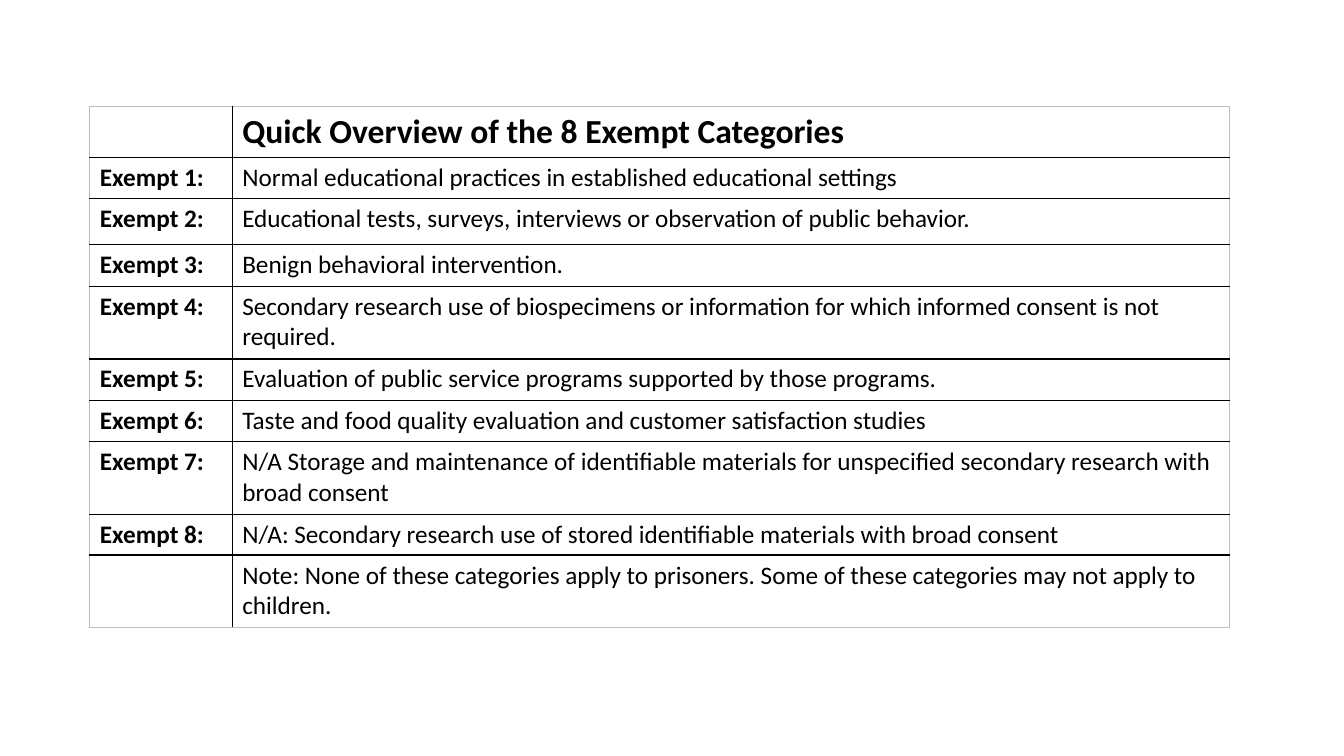
from lxml.etree import SubElement
from pptx import Presentation
from pptx.dml.color import RGBColor
from pptx.oxml.ns import qn
from pptx.util import Pt

COLORS = {"text": "000000", "inner": "000000", "outer": "BFBFBF"}
FONT_NAME = "Calibri"
TABLE_LEFT, TABLE_TOP = 64.2, 76
COLUMN_WIDTHS = [101.7, 712.6]
HEADER_HEIGHT = 36.3
ROW_HEIGHTS = [HEADER_HEIGHT, 29.2, 33, 29.7, 52, 29.7, 29.2, 52, 29.2, 52]

HEADING = "Quick Overview of the 8 Exempt Categories"
CATEGORIES = [
    "Normal educational practices in established educational settings",
    "Educational tests, surveys, interviews or observation of public behavior.",
    "Benign behavioral intervention.",
    "Secondary research use of biospecimens or information for which informed consent is not required.",
    "Evaluation of public service programs supported by those programs.",
    "Taste and food quality evaluation and customer satisfaction studies",
    "N/A Storage and maintenance of identifiable materials for unspecified secondary research with broad consent",
    "N/A: Secondary research use of stored identifiable materials with broad consent",
]
NOTE = "Note: None of these categories apply to prisoners. Some of these categories may not apply to children."


def write_cell(cell, text, size, bold):
    """Write one formatted run, or only set the font size of an empty cell."""
    paragraph = cell.text_frame.paragraphs[0]
    target = paragraph.add_run() if text else paragraph
    if text:
        target.text = text
    font = target.font
    for name, value in {"name": FONT_NAME, "size": Pt(size), "bold": bold}.items():
        setattr(font, name, value)
    font.color.rgb = RGBColor.from_string(COLORS["text"])


def set_borders(cell, edges):
    """Draw the four cell borders; edges tells which lie on the table's rim."""
    properties = cell._tc.get_or_add_tcPr()
    for side, is_outer in edges.items():
        line = SubElement(properties, qn(f"a:ln{side}"), w=str(Pt(1)))
        fill = SubElement(line, qn("a:solidFill"))
        SubElement(fill, qn("a:srgbClr"), val=COLORS["outer" if is_outer else "inner"])


def add_overview_table(slide, rows):
    frame = slide.shapes.add_table(
        len(rows), len(COLUMN_WIDTHS), Pt(TABLE_LEFT), Pt(TABLE_TOP),
        Pt(sum(COLUMN_WIDTHS)), Pt(sum(ROW_HEIGHTS)))
    table = frame.table
    table.first_row = table.horz_banding = False
    for column, width in zip(table.columns, COLUMN_WIDTHS):
        column.width = Pt(width)
    for row, height in zip(table.rows, ROW_HEIGHTS):
        row.height = Pt(height)

    last_row, last_column = len(rows) - 1, len(COLUMN_WIDTHS) - 1
    for row_index, texts in enumerate(rows):
        is_header = row_index == 0
        for column_index, text in enumerate(texts):
            cell = table.cell(row_index, column_index)
            write_cell(cell, text, 24 if is_header else 18,
                       is_header or column_index == 0)
            set_borders(cell, {
                "L": column_index == 0, "R": column_index == last_column,
                "T": is_header, "B": row_index == last_row})
            cell.fill.background()


def main():
    presentation = Presentation()
    presentation.slide_width, presentation.slide_height = Pt(960), Pt(540)
    slide = presentation.slides.add_slide(presentation.slide_layouts[6])

    # Heading, numbered categories and closing note
    numbered = [(f"Exempt {number}:", text)
                for number, text in enumerate(CATEGORIES, start=1)]
    add_overview_table(slide, [("", HEADING), *numbered, ("", NOTE)])

    presentation.save("out.pptx")


if __name__ == "__main__":
    main()
